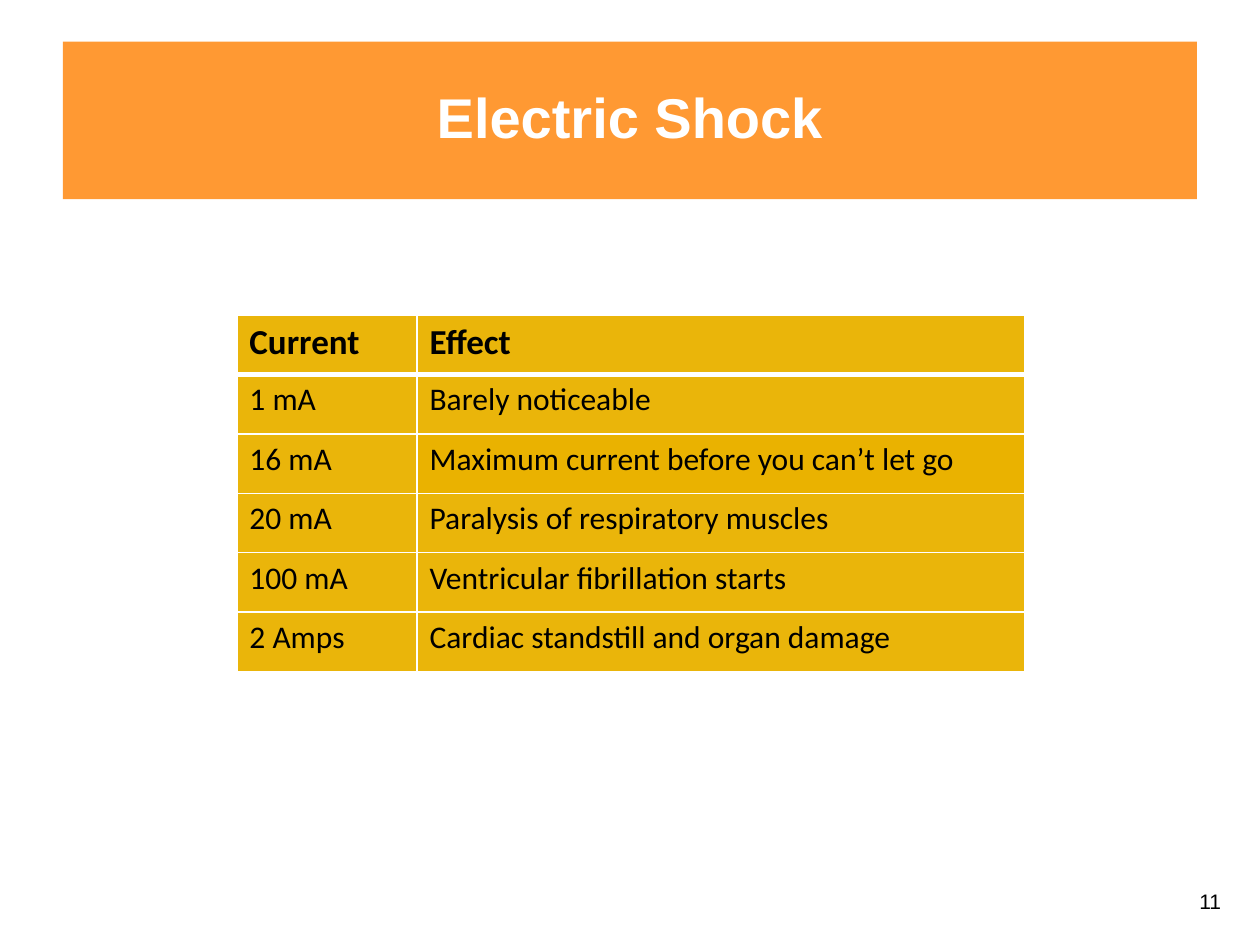
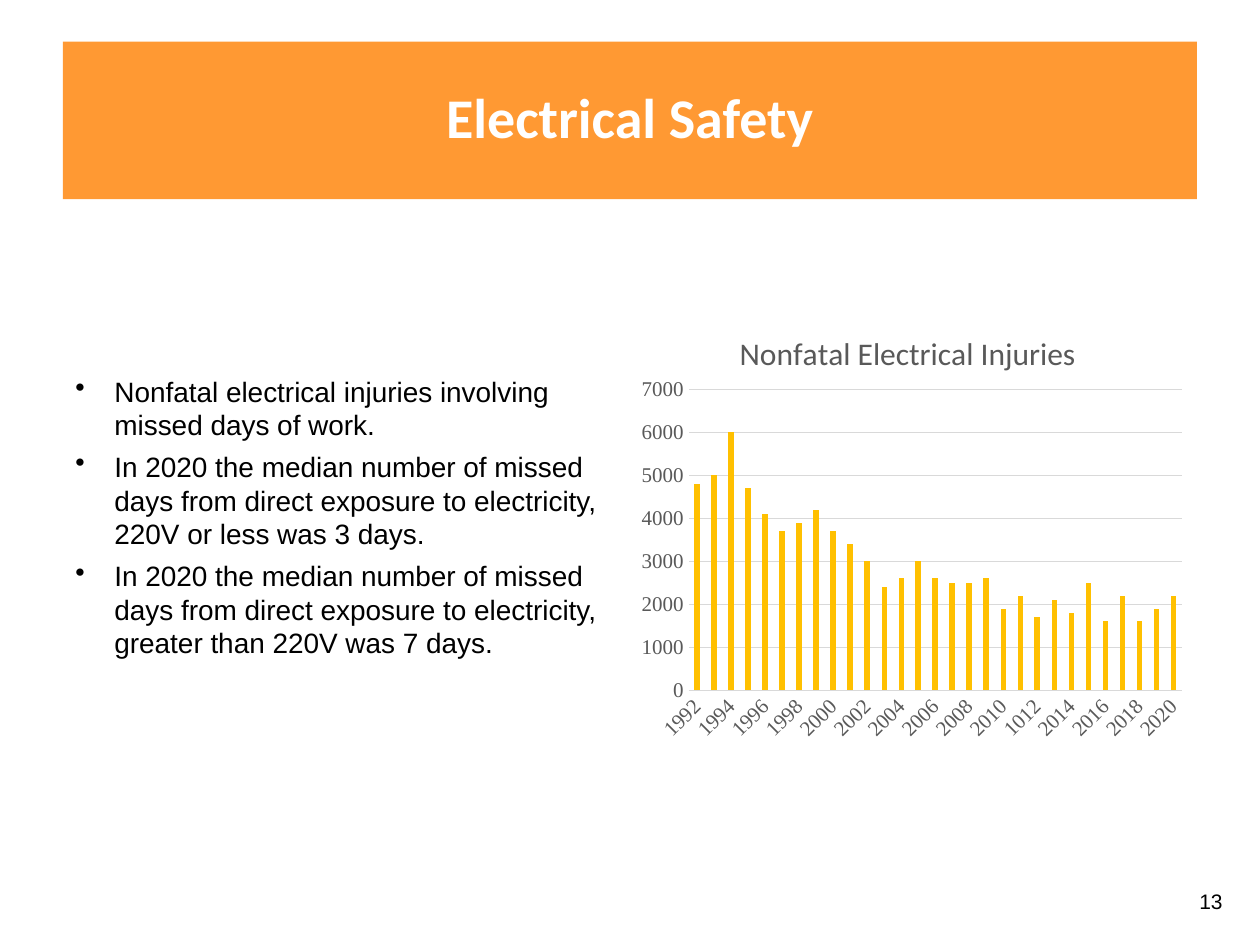
from pptx import Presentation
from pptx.chart.data import CategoryChartData
from pptx.dml.color import RGBColor
from pptx.enum.chart import XL_CHART_TYPE, XL_TICK_MARK
from pptx.enum.shapes import MSO_SHAPE
from pptx.enum.text import MSO_ANCHOR, PP_ALIGN
from pptx.oxml import parse_xml
from pptx.oxml.ns import nsdecls, qn
from pptx.util import Emu, Pt

COLUMN = XL_CHART_TYPE.COLUMN_CLUSTERED
NO_TICK = XL_TICK_MARK.NONE
RECT = MSO_SHAPE.RECTANGLE
MIDDLE = MSO_ANCHOR.MIDDLE
LEFT, CENTER = PP_ALIGN.LEFT, PP_ALIGN.CENTER

PX = 9144
WHITE, BLACK, GREY, RULE = "FFFFFF", "000000", "595959", "D9D9D9"
ORANGE, GOLD, AMBER = "FF9933", "EAB200", "FFC000"
SANS, BODY, SERIF = "Arial", "Calibri", "Times New Roman"

BAND = (50, 33, 900, 125)
HEAD = (50, 30, 900, 125)
PAGE = (942, 700, 40, 50)
GRID = (188, 250, 625, 283)
LIST = (50, 292, 444, 277)
PLOT = (497, 233, 450, 362)

EFFECTS = [
    ("Current", "Effect"),
    ("1 mA", "Barely noticeable"),
    ("16 mA", "Maximum current before you can’t let go"),
    ("20 mA", "Paralysis of respiratory muscles"),
    ("100 mA", "Ventricular fibrillation starts"),
    ("2 Amps", "Cardiac standstill and organ damage"),
]
SOLID = (2, 1)
POINTS = [
    "Nonfatal electrical injuries involving missed days of work.",
    "In 2020 the median number of missed days from direct exposure to "
    "electricity, 220V or less was 3 days.",
    "In 2020 the median number of missed days from direct exposure to "
    "electricity, greater than 220V was 7 days.",
]
YEARS = ["1012" if year == 2012 else str(year) for year in range(1992, 2021)]
COUNTS = [
    4800, 5000, 6000, 4700, 4100, 3700, 3900, 4200, 3700, 3400,
    3000, 2400, 2600, 3000, 2600, 2500, 2500, 2600, 1900, 2200,
    1700, 2100, 1800, 2500, 1600, 2200, 1600, 1900, 2200,
]


def emu(box):
    """Turn px lengths into EMU."""
    return [Emu(n * PX) for n in box]


def rgb(code):
    """Return the colour of a hex string."""
    return RGBColor.from_string(code)


def put(item, **values):
    """Set each given attribute on an item."""
    for name, value in values.items():
        setattr(item, name, value)


def style(font, face, size, color=BLACK, bold=False):
    """Format a font."""
    put(font, name=face, size=Pt(size), bold=bold)
    font.color.rgb = rgb(color)


def paint(fill, color):
    """Fill with one colour."""
    fill.solid()
    fill.fore_color.rgb = rgb(color)


def write(slide, box, lines, font, align=LEFT, **frame):
    """Add a text box with one paragraph per line."""
    text = slide.shapes.add_textbox(*emu(box)).text_frame
    put(text, word_wrap=True, **frame)
    text.text = "\n".join(lines)
    for para in text.paragraphs:
        para.alignment = align
        style(para.font, *font)
    return text


def base(deck, title, face, page):
    """Add a slide with its band, title and page number."""
    slide = deck.slides.add_slide(deck.slide_layouts[6])
    band = slide.shapes.add_shape(RECT, *emu(BAND))
    band.shadow.inherit = False
    paint(band.fill, ORANGE)
    band.line.fill.background()
    write(slide, HEAD, [title], (face, 32, WHITE, True), CENTER,
          vertical_anchor=MIDDLE)
    write(slide, PAGE, [str(page)], (SANS, 12))
    return slide


def edge(cell, row):
    """Draw white cell borders, thicker below the header row."""
    widths = {"L": 1, "R": 1, "T": 3 if row == 1 else 1,
              "B": 3 if row == 0 else 1}
    props = cell._tc.get_or_add_tcPr()
    for spot, (side, width) in enumerate(widths.items()):
        props.insert(spot, parse_xml(
            f'<a:ln{side} {nsdecls("a")} w="{Pt(width)}"><a:solidFill>'
            f'<a:srgbClr val="{WHITE}"/></a:solidFill></a:ln{side}>'))


def table(slide, box):
    """Add the table of shock effects."""
    grid = slide.shapes.add_table(len(EFFECTS), 2, *emu(box)).table
    put(grid, horz_banding=False)
    first = 143
    for col, width in zip(grid.columns, emu((first, box[2] - first))):
        col.width = width
    for row, texts in enumerate(EFFECTS):
        for col, text in enumerate(texts):
            cell = grid.cell(row, col)
            cell.text = text
            style(cell.text_frame.paragraphs[0].font, BODY,
                  18 if row else 20, bold=row == 0)
            paint(cell.fill, GOLD)
            if (row, col) != SOLID:
                tint = cell._tc.tcPr.find(".//" + qn("a:srgbClr"))
                tint.append(parse_xml(
                    f'<a:alpha {nsdecls("a")} val="96000"/>'))
            edge(cell, row)


def bullets(slide, box):
    """Add the bulleted list of findings."""
    text = write(slide, box, POINTS, (SANS, 16))
    for spot, para in enumerate(text.paragraphs):
        props = para._p.get_or_add_pPr()
        props.set("marL", str(31 * PX))
        props.set("indent", str(-31 * PX))
        if spot:
            para.space_before = Pt(4.8)
        mark = parse_xml(f'<a:buChar {nsdecls("a")} char="•"/>')
        props.find(qn("a:defRPr")).addprevious(mark)


def pin(node, spot, **place):
    """Fix a chart part at fractions of the chart area."""
    for old in node.findall(qn("c:layout")):
        node.remove(old)
    inner = '<c:layoutTarget val="inner"/>' if "w" in place else ""
    modes = "".join(f'<c:{key}Mode val="edge"/>' for key in "xy")
    sizes = "".join(f'<c:{key} val="{n}"/>' for key, n in place.items())
    node.insert(spot, parse_xml(
        f'<c:layout {nsdecls("c")}><c:manualLayout>{inner}{modes}{sizes}'
        '</c:manualLayout></c:layout>'))


def chart(slide, box):
    """Add the column chart of injuries by year."""
    data = CategoryChartData()
    data.categories = YEARS
    data.add_series("Series 1", COUNTS)
    graph = slide.shapes.add_chart(COLUMN, *emu(box), data).chart
    put(graph, has_legend=False, has_title=True)
    style(graph.font, SERIF, 10)
    title = graph.chart_title
    title.text_frame.text = "Nonfatal Electrical Injuries"
    style(title.text_frame.paragraphs[0].runs[0].font, BODY, 18, GREY)
    plot = graph.plots[0]
    put(plot, gap_width=219, overlap=-27, vary_by_categories=False)
    paint(plot.series[0].format.fill, AMBER)
    cats, vals = graph.category_axis, graph.value_axis
    for axis in (cats, vals):
        put(axis, major_tick_mark=NO_TICK, minor_tick_mark=NO_TICK)
        style(axis.tick_labels.font, SERIF, 12, GREY)
    put(vals, minimum_scale=0, maximum_scale=7000, major_unit=1000,
        has_major_gridlines=True)
    vals.format.line.fill.background()
    for line in (cats.format.line, vals.major_gridlines.format.line):
        line.color.rgb = rgb(RULE)
        line.width = Pt(0.75)
    root = graph.element
    root.xpath(".//c:catAx/c:txPr/a:bodyPr")[0].set("rot", "-2700000")
    pin(root.xpath(".//c:plotArea")[0], 0, x=0.11, y=0.21, w=0.87, h=0.66)
    pin(root.xpath("./c:chart/c:title")[0], 1, x=0.19, y=0.07)


def main():
    """Build and save the slides."""
    deck = Presentation()
    size = emu((1000, 750))
    put(deck, slide_width=size[0], slide_height=size[1])
    table(base(deck, "Electric Shock", SANS, 11), GRID)
    slide = base(deck, "Electrical Safety", BODY, 13)
    chart(slide, PLOT)
    bullets(slide, LIST)
    deck.save("out.pptx")


if __name__ == "__main__":
    main()
